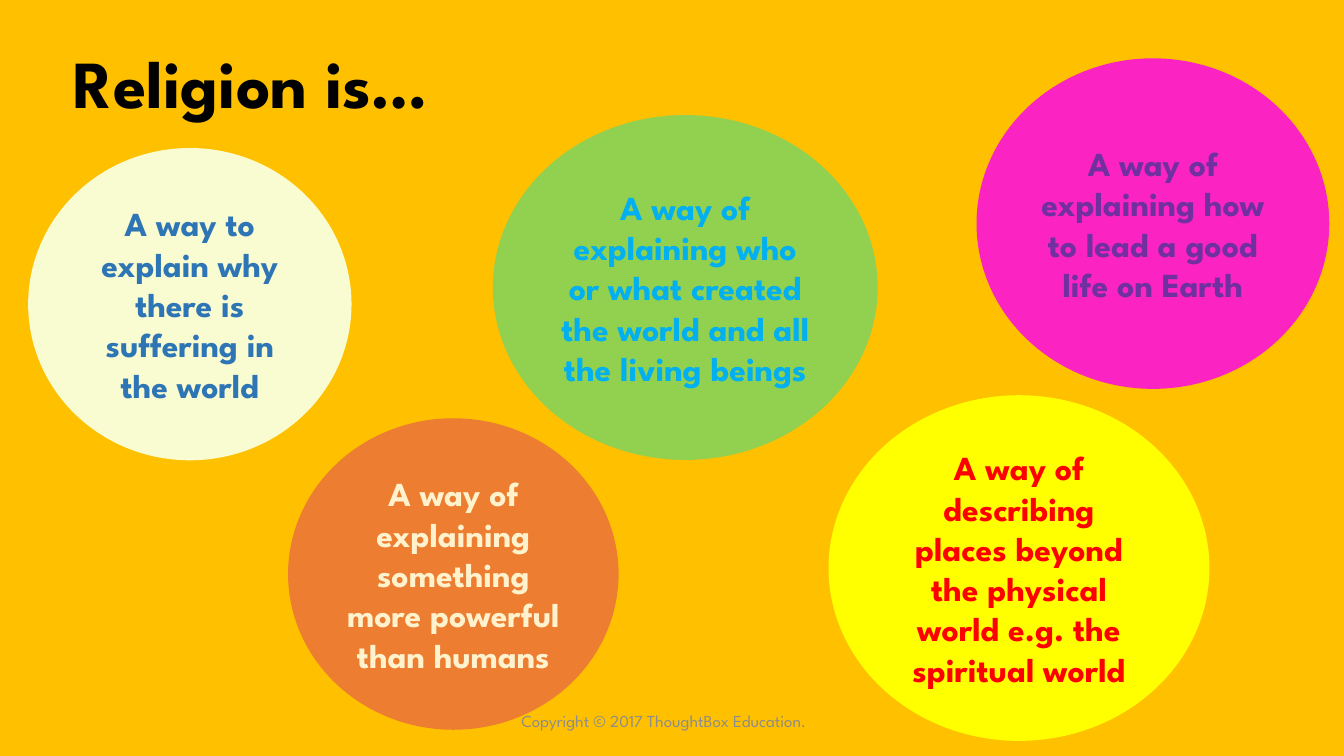
from pptx import Presentation
from pptx import util as u
from pptx.dml.color import RGBColor
from pptx.enum import shapes, text

FONT = "League Spartan"
BACKGROUND = "FFC000"
TITLE = ("Religion is…", (1.6, 0.97, 29.21, 2.26))
COPYRIGHT = ("Copyright © 2017 ThoughtBox Education.", (11.02, 17.65, 11.43, 1.02))

# Wording, place in cm (left, top, width, height), fill, text colour
IDEAS = [
    ("A way to explain why there is suffering in the world",
     (0.71, 3.73, 8.15, 7.87), "F9FCD0", "2E75B6"),
    ("A way of explaining something more powerful than humans",
     (7.26, 10.54, 8.33, 7.85), "ED7D31", "FFF2CC"),
    ("A way of explaining who or what created the world and all the living beings",
     (12.42, 2.9, 9.7, 8.69), "92D050", "00B0F0"),
    ("A way of describing places beyond the physical world e.g. the spiritual world",
     (20.88, 9.96, 9.6, 8.71), "FFFF00", "FF0000"),
    ("A way of explaining how to lead a good life on Earth",
     (24.61, 1.47, 8.89, 8.33), "FB23C2", "7030A0"),
]


def paint(fill, colour):
    fill.solid()
    fill.fore_color.rgb = RGBColor.from_string(colour)


def lengths(place):
    return [u.Cm(value) for value in place]


def write(box, wording, size, colour, bold=True,
          align=text.PP_ALIGN.CENTER, anchor=text.MSO_ANCHOR.MIDDLE):
    frame = box.text_frame
    frame.text = wording
    frame.word_wrap = True
    frame.auto_size = text.MSO_AUTO_SIZE.NONE
    frame.vertical_anchor = anchor
    para = frame.paragraphs[0]
    para.alignment = align
    para.font.name = FONT
    para.font.size = u.Pt(size)
    para.font.bold = bold
    paint(para.font.fill, colour)
    return para


deck = Presentation()
deck.slide_width, deck.slide_height = u.Cm(33.87), u.Cm(19.05)
page = deck.slides.add_slide(deck.slide_layouts.get_by_name("Title Only"))
paint(page.background.fill, BACKGROUND)

# Title
wording, place = TITLE
title = page.shapes.title
title.left, title.top, title.width, title.height = lengths(place)
para = write(title, wording, 48, "000000",
             align=text.PP_ALIGN.LEFT, anchor=text.MSO_ANCHOR.BOTTOM)
para.line_spacing = 0.9

# Copyright line
wording, place = COPYRIGHT
write(page.shapes.add_textbox(*lengths(place)), wording, 12, "8C8C8C", bold=False)

# Idea bubbles
for wording, place, fill, colour in IDEAS:
    bubble = page.shapes.add_shape(shapes.MSO_SHAPE.OVAL, *lengths(place))
    bubble.shadow.inherit = False
    bubble.line.fill.background()
    paint(bubble.fill, fill)
    write(bubble, wording, 24, colour)

deck.save("out.pptx")
